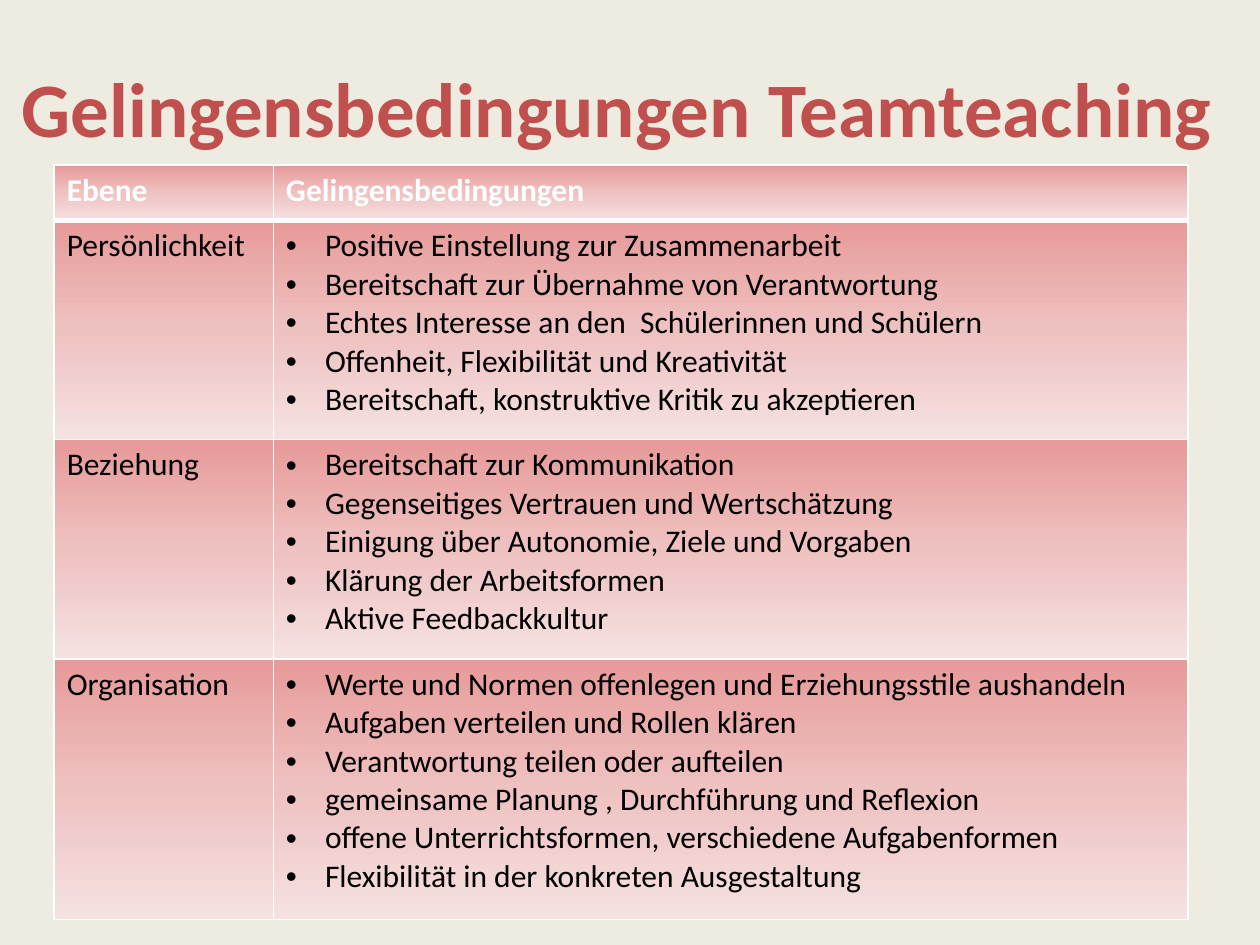
from lxml import etree
from pptx import Presentation
from pptx.dml.color import RGBColor
from pptx.enum.text import MSO_ANCHOR, PP_ALIGN
from pptx.oxml.ns import qn
from pptx.util import Inches, Pt

CENTER = PP_ALIGN.CENTER
MIDDLE = MSO_ANCHOR.MIDDLE
FONT = "Calibri"
COLORS = {
    "background": "EEECE1",
    "title": "C0504D",
    "text": "000000",
    "white": "FFFFFF",
    "gradient_top": "E79A99",
    "gradient_middle": "EEC2C1",
    "gradient_bottom": "F6E1E1",
}
GRADIENT = [(0, "gradient_top"), (50, "gradient_middle"), (100, "gradient_bottom")]
COLUMN_WIDTHS = [1.74, 7.26]
ROW_HEIGHTS = [0.44, 1.74, 1.74, 2.07]
BULLET_INDENT = Inches(0.31)
THIN, THICK = Pt(1), Pt(3)

HEADINGS = ["Ebene", "Gelingensbedingungen"]
LEVELS = [
    ("Persönlichkeit", [
        "Positive Einstellung zur Zusammenarbeit",
        "Bereitschaft zur Übernahme von Verantwortung",
        "Echtes Interesse an den  Schülerinnen und Schülern",
        "Offenheit, Flexibilität und Kreativität",
        "Bereitschaft, konstruktive Kritik zu akzeptieren",
    ]),
    ("Beziehung", [
        "Bereitschaft zur Kommunikation",
        "Gegenseitiges Vertrauen und Wertschätzung",
        "Einigung über Autonomie, Ziele und Vorgaben",
        "Klärung der Arbeitsformen",
        "Aktive Feedbackkultur",
    ]),
    ("Organisation", [
        "Werte und Normen offenlegen und Erziehungsstile aushandeln",
        "Aufgaben verteilen und Rollen klären",
        "Verantwortung teilen oder aufteilen",
        "gemeinsame Planung , Durchführung und Reflexion",
        "offene Unterrichtsformen, verschiedene Aufgabenformen",
        "Flexibilität in der konkreten Ausgestaltung",
    ]),
]


def add_run(paragraph, text, size, color, bold=False):
    run = paragraph.add_run()
    run.text = text
    run.font.name = FONT
    run.font.size = Pt(size)
    run.font.bold = bold
    run.font.color.rgb = RGBColor.from_string(COLORS[color])


def add_element(parent, tag, **attributes):
    values = {name: str(value) for name, value in attributes.items()}
    return etree.SubElement(parent, qn(tag), values)


def add_bullet(paragraph):
    properties = paragraph._p.get_or_add_pPr()
    properties.set("marL", str(BULLET_INDENT))
    properties.set("indent", str(-BULLET_INDENT))
    add_element(properties, "a:buFont", typeface="Arial")
    add_element(properties, "a:buChar", char="•")


def style_cell(cell, top, bottom):
    """Give a cell white borders and a vertical gradient."""
    properties = cell._tc.get_or_add_tcPr()
    borders = {"a:lnL": THIN, "a:lnR": THIN, "a:lnT": top, "a:lnB": bottom}
    for tag, width in borders.items():
        line = add_element(properties, tag, w=width)
        fill = add_element(line, "a:solidFill")
        add_element(fill, "a:srgbClr", val=COLORS["white"])
    gradient = add_element(properties, "a:gradFill", rotWithShape=1)
    stops = add_element(gradient, "a:gsLst")
    for percent, color in GRADIENT:
        stop = add_element(stops, "a:gs", pos=percent * 1000)
        add_element(stop, "a:srgbClr", val=COLORS[color])
    add_element(gradient, "a:lin", ang=90 * 60000, scaled=0)


def fill_cell(cell, lines, color="text", bold=False, bulleted=False):
    frame = cell.text_frame
    for index, text in enumerate(lines):
        paragraph = frame.add_paragraph() if index else frame.paragraphs[0]
        if bulleted:
            add_bullet(paragraph)
        add_run(paragraph, text, 18, color, bold)


def add_title(slide, text):
    box = slide.shapes.add_textbox(Inches(0), Inches(0.3), Inches(9.8), Inches(1.09))
    frame = box.text_frame
    frame.word_wrap = True
    frame.vertical_anchor = MIDDLE
    paragraph = frame.paragraphs[0]
    paragraph.alignment = CENTER
    add_run(paragraph, text, 44, "title", bold=True)


def add_conditions_table(slide):
    table = slide.shapes.add_table(
        len(ROW_HEIGHTS), len(COLUMN_WIDTHS), Inches(0.43), Inches(1.31),
        Inches(sum(COLUMN_WIDTHS)), Inches(sum(ROW_HEIGHTS))).table
    for column, width in zip(table.columns, COLUMN_WIDTHS):
        column.width = Inches(width)
    for index, (row, height) in enumerate(zip(table.rows, ROW_HEIGHTS)):
        row.height = Inches(height)
        for cell in row.cells:
            style_cell(cell, top=THICK if index == 1 else THIN,
                       bottom=THICK if index == 0 else THIN)
    for column, heading in enumerate(HEADINGS):
        fill_cell(table.cell(0, column), [heading], "white", bold=True)
    for row, (level, conditions) in enumerate(LEVELS, start=1):
        fill_cell(table.cell(row, 0), [level])
        fill_cell(table.cell(row, 1), conditions, bulleted=True)


def main():
    presentation = Presentation()
    presentation.slide_width = Inches(10)
    presentation.slide_height = Inches(7.5)
    slide = presentation.slides.add_slide(presentation.slide_layouts[6])
    background = slide.background.fill
    background.solid()
    background.fore_color.rgb = RGBColor.from_string(COLORS["background"])
    add_title(slide, "Gelingensbedingungen Teamteaching")
    add_conditions_table(slide)
    presentation.save("out.pptx")


if __name__ == "__main__":
    main()
